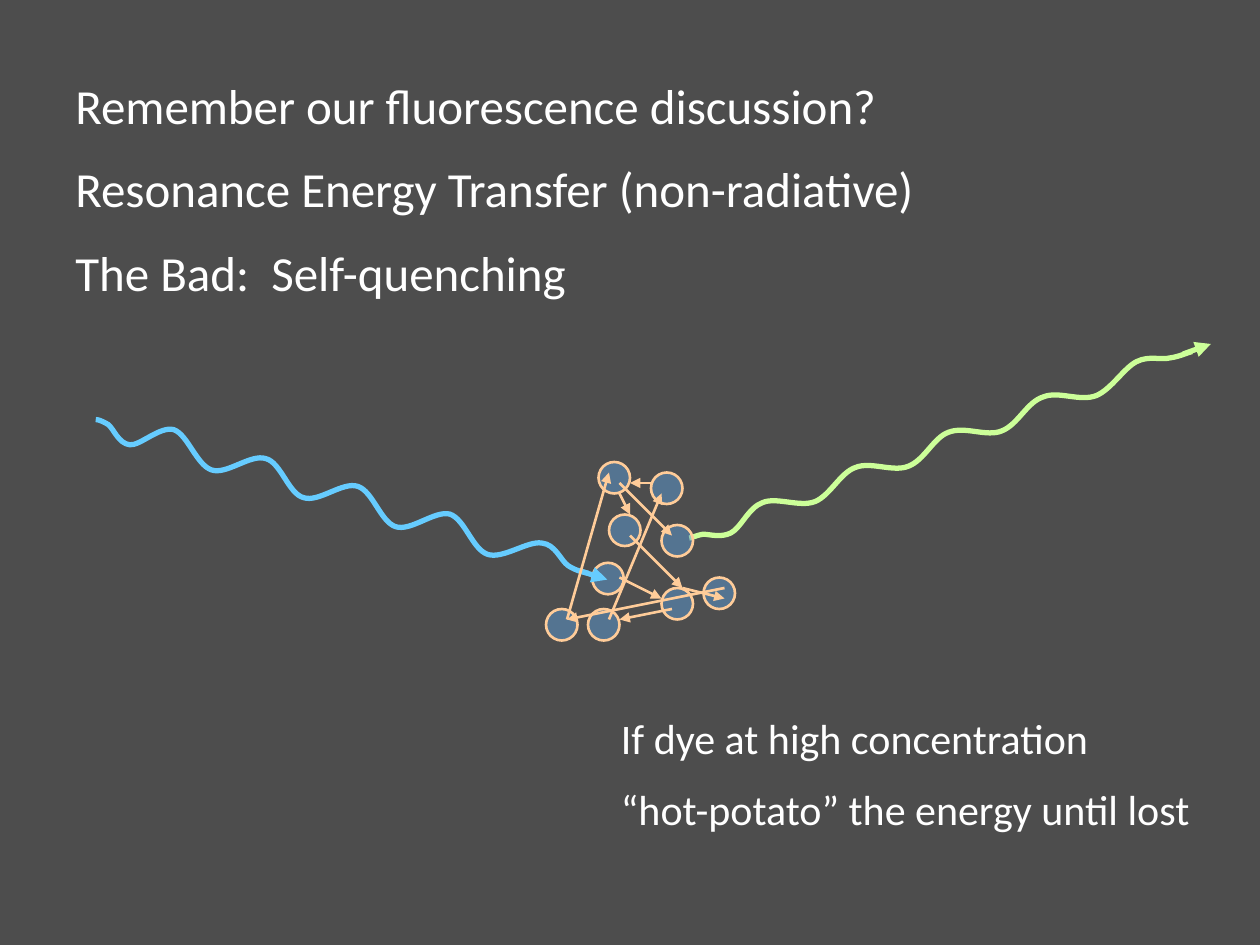
from lxml.etree import SubElement
from pptx import Presentation
from pptx.dml.color import RGBColor
from pptx.enum.shapes import MSO_CONNECTOR, MSO_SHAPE
from pptx.enum.text import MSO_ANCHOR
from pptx.oxml.ns import qn
from pptx.util import Inches, Pt

BACKGROUND = RGBColor(0x4D, 0x4D, 0x4D)
WHITE = RGBColor(0xFF, 0xFF, 0xFF)
DYE_BLUE = RGBColor(0x5B, 0x9B, 0xD5)
PEACH = RGBColor(0xFF, 0xCC, 0x99)
LIGHT_IN = RGBColor(0x66, 0xCC, 0xFF)
LIGHT_OUT = RGBColor(0xCC, 0xFF, 0x99)

# Left, top, width, height in inches; font size in points; lines
TOPICS = ((0.5, 0.5, 8.25, 1.99), 28, [
    "Remember our fluorescence discussion?",
    "Resonance Energy Transfer (non-radiative)",
    "The Bad:  Self-quenching",
])
CONCLUSION = ((4.83, 5.38, 4.74, 1.51), 24, [
    "If dye at high concentration",
    "“hot-potato” the energy until lost",
])

# Waves in inches: a start point, then two control points and an end per curve
INCOMING_WAVE = [
    (0.76, 3.33),
    (0.78, 3.33), (0.81, 3.34), (0.86, 3.37),
    (0.9, 3.4), (0.94, 3.52), (1.03, 3.53),
    (1.11, 3.54), (1.27, 3.38), (1.38, 3.41),
    (1.49, 3.45), (1.56, 3.69), (1.68, 3.73),
    (1.8, 3.77), (1.99, 3.6), (2.11, 3.64),
    (2.23, 3.67), (2.29, 3.92), (2.41, 3.95),
    (2.53, 3.99), (2.72, 3.82), (2.84, 3.86),
    (2.96, 3.9), (3.02, 4.14), (3.14, 4.18),
    (3.26, 4.22), (3.45, 4.05), (3.57, 4.08),
    (3.69, 4.12), (3.75, 4.36), (3.87, 4.4),
    (3.99, 4.44), (4.19, 4.29), (4.3, 4.31),
    (4.41, 4.32), (4.45, 4.45), (4.51, 4.49),
    (4.57, 4.53), (4.63, 4.54), (4.67, 4.55),
]
INCOMING_TIP = (4.6, 4.53), (4.82, 4.6)
OUTGOING_WAVE = [
    (5.47, 4.27),
    (5.49, 4.27), (5.52, 4.25), (5.58, 4.24),
    (5.63, 4.24), (5.72, 4.27), (5.8, 4.23),
    (5.88, 4.19), (5.94, 4.03), (6.05, 3.99),
    (6.16, 3.94), (6.35, 4.03), (6.47, 3.98),
    (6.59, 3.93), (6.67, 3.75), (6.79, 3.71),
    (6.91, 3.66), (7.09, 3.75), (7.21, 3.7),
    (7.34, 3.65), (7.41, 3.47), (7.53, 3.43),
    (7.66, 3.38), (7.83, 3.47), (7.95, 3.42),
    (8.08, 3.37), (8.15, 3.19), (8.28, 3.15),
    (8.4, 3.1), (8.57, 3.19), (8.7, 3.14),
    (8.82, 3.09), (8.92, 2.92), (9.02, 2.87),
    (9.12, 2.82), (9.21, 2.86), (9.29, 2.84),
    (9.36, 2.83), (9.42, 2.8), (9.46, 2.79),
]
OUTGOING_TIP = (9.39, 2.81), (9.61, 2.73)

# Dye cluster on a grid of twelfths of an inch
CELL = 1 / 12
DYE_CELLS = 3
EXCITED_DYE = (56.4, 53.6)
OTHER_DYES = [(63, 56), (63, 50), (56, 58), (58, 49),
              (52, 58), (67, 55), (62, 45), (57, 44)]
ENERGY_HOPS = [
    ((59, 55), (63, 57)), ((64, 58), (59, 59)), ((58, 59), (63, 47)),
    ((62, 46), (60, 46)), ((59, 47), (60, 49)), ((60, 51), (65, 56)),
    ((65, 56), (69, 57)), ((69, 56), (54, 59)), ((54, 59), (58, 45)),
    ((59, 46), (64, 51)),
]


def add_dye(shapes, cell):
    left, top = (Inches(n * CELL) for n in cell)
    size = Inches(DYE_CELLS * CELL)
    dye = shapes.add_shape(MSO_SHAPE.OVAL, left, top, size, size)
    dye.shadow.inherit = False
    dye.fill.solid()
    dye.fill.fore_color.rgb = DYE_BLUE
    fill_color = dye.element.spPr.find(qn("a:solidFill"))[0]
    SubElement(fill_color, qn("a:alpha"), val="50000")
    dye.line.color.rgb = PEACH
    dye.line.width = Pt(1.5)


def add_arrow(shapes, start, end, color, width):
    arrow = shapes.add_connector(
        MSO_CONNECTOR.STRAIGHT, *(Inches(n) for n in (*start, *end)))
    arrow.line.color.rgb = color
    arrow.line.width = Pt(width)
    properties = arrow.element.spPr
    SubElement(properties.find(qn("a:ln")), qn("a:tailEnd"), type="triangle")
    SubElement(properties, qn("a:effectLst"))


def add_light(shapes, points, tip, color):
    """Group a wavy curve with the arrow that ends it."""
    group = shapes.add_group_shape().shapes
    start, *rest = [(Inches(x), Inches(y)) for x, y in points]
    builder = group.build_freeform(*start)
    builder.add_line_segments(rest, close=False)
    wave = builder.convert_to_shape()
    outline = next(wave.element.iter(qn("a:path")))
    segments = outline.findall(qn("a:lnTo"))
    # Each three straight segments become one cubic curve
    for i in range(0, len(segments), 3):
        curve = SubElement(outline, qn("a:cubicBezTo"))
        for segment in segments[i:i + 3]:
            curve.append(segment[0])
            outline.remove(segment)
    wave.shadow.inherit = False
    wave.fill.background()
    wave.line.color.rgb = color
    wave.line.width = Pt(3)
    add_arrow(group, *tip, color, 3)


def add_text(shapes, box, size, lines):
    frame = shapes.add_textbox(*(Inches(n) for n in box)).text_frame
    frame.word_wrap = True
    frame.vertical_anchor = MSO_ANCHOR.MIDDLE
    frame.text = "\n".join(lines)
    for paragraph in frame.paragraphs:
        paragraph.space_before = Pt(size / 2)
        paragraph.font.name = "Calibri"
        paragraph.font.size = Pt(size)
        paragraph.font.color.rgb = WHITE


def main():
    deck = Presentation()
    deck.slide_width, deck.slide_height = Inches(10), Inches(7.5)
    slide = deck.slides.add_slide(deck.slide_layouts[6])
    slide.background.fill.solid()
    slide.background.fill.fore_color.rgb = BACKGROUND
    shapes = slide.shapes

    add_dye(shapes, EXCITED_DYE)
    add_light(shapes, INCOMING_WAVE, INCOMING_TIP, LIGHT_IN)
    add_light(shapes, OUTGOING_WAVE, OUTGOING_TIP, LIGHT_OUT)
    add_text(shapes, *CONCLUSION)
    for cell in OTHER_DYES:
        add_dye(shapes, cell)
    for hop in ENERGY_HOPS:
        start, end = ((x * CELL, y * CELL) for x, y in hop)
        add_arrow(shapes, start, end, PEACH, 1.5)
    add_text(shapes, *TOPICS)
    deck.save("out.pptx")


if __name__ == "__main__":
    main()
